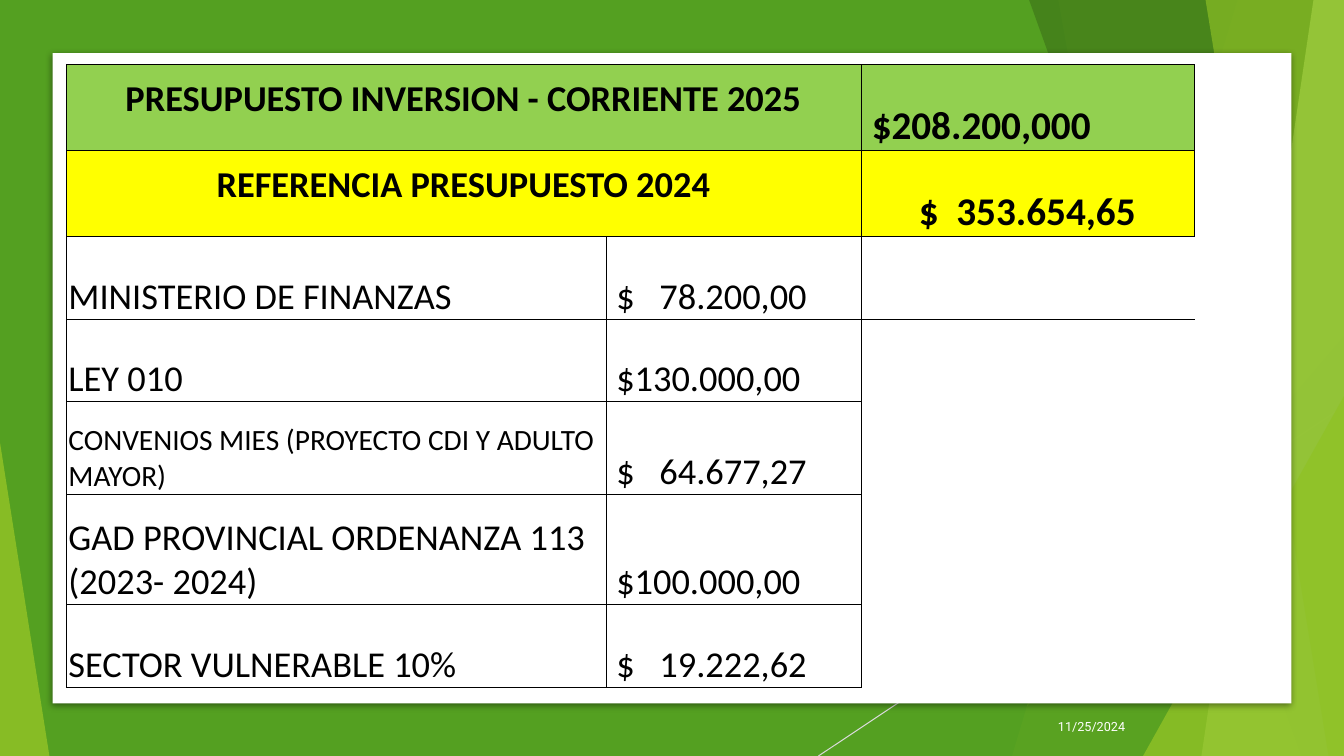
from lxml.etree import SubElement
from pptx import Presentation
from pptx.dml.color import RGBColor
from pptx.enum.shapes import MSO_CONNECTOR, MSO_SHAPE
from pptx.enum.text import MSO_ANCHOR, PP_ALIGN
from pptx.oxml import parse_xml
from pptx.oxml.ns import nsdecls, qn
from pptx.util import Pt

W, H = 960, 540
COLORS = {
    "green": "54A021", "lime": "90C226", "dark": "3F7819", "pale": "C0E474",
    "white": "FFFFFF", "black": "000000", "rule": "D9D9D9",
    "header": "92D050", "reference": "FFFF00",
}

# Back to front. band: top x, bottom x of the left edge; triangle: box, apex
FACETS = [
    ("band", (884.2, 722.9), "lime", 30),
    ("band", (756, 851.8), "lime", 20),
    ("triangle", (703.5, 239.8, 256.5, 300.2, 1), "green", 72),
    ("band", (735.1, 929.5), "dark", 70),
    ("band", (938.2, 858.2), "pale", 70),
    ("band", (861.1, 949), "lime", 65),
    ("triangle", (816.5, 283, 143.5, 257, 1), "lime", 80),
    ("triangle", (0, 316.1, 35.3, 223.9, 0), "lime", 85),
]
PANEL = (37.5, 38, 885, 464.5)
DATE = "11/25/2024"
DATE_BOX = (738.7, 504.7, 72, 28.8)

# title, amount, fill, left margin of the amount
TOTALS = [
    ("PRESUPUESTO INVERSION - CORRIENTE 2025", "$208.200,000", "header", 7.8),
    ("REFERENCIA PRESUPUESTO 2024", "$\t353.654,65", "reference", 41.4),
]
# source, amount, size of the source
SOURCES = [
    ("MINISTERIO DE FINANZAS", "$\t78.200,00", 26),
    ("LEY 010", "$130.000,00", 26),
    ("CONVENIOS MIES (PROYECTO CDI Y ADULTO MAYOR)", "$\t64.677,27", 21),
    ("GAD PROVINCIAL ORDENANZA 113 (2023- 2024)", "$100.000,00", 26),
    ("SECTOR VULNERABLE 10%", "$\t19.222,62", 26),
]
TABLE_LEFT, TABLE_TOP = 47.5, 46.1
COL_WIDTHS = [385.4, 182, 238.5]
ROW_HEIGHTS = [61.4, 61.4, 58.9, 58.9, 66.3, 79, 59]
TITLE_INSETS = (17.3, 8.6, 17.3, 8.6)
NO_STYLE = "{2D5ABB26-0587-4C30-8999-92F81FD0307C}"


def rgb(name):
    return RGBColor.from_string(COLORS[name])


def box(*lengths):
    return [Pt(v) for v in lengths]


def write(tf, text, size, font="Calibri", color="black", bold=False,
          align=PP_ALIGN.LEFT, tab=None):
    """Fill the first paragraph; tab is a left tab stop in points."""
    tf.word_wrap = True
    p = tf.paragraphs[0]
    p.alignment = align
    if tab:
        stops = SubElement(p._p.get_or_add_pPr(), qn("a:tabLst"))
        SubElement(stops, qn("a:tab"), pos=str(Pt(tab)), algn="l")
    r = p.add_run()
    r.text = text
    r.font.size, r.font.name, r.font.bold = Pt(size), font, bold
    r.font.color.rgb = rgb(color)


def paint(sp, color, alpha=100):
    sp.shadow.inherit = False
    sp.line.fill.background()
    sp.fill.solid()
    sp.fill.fore_color.rgb = rgb(color)
    if alpha < 100:
        clr = sp._element.spPr.find(qn("a:solidFill"))[0]
        SubElement(clr, qn("a:alpha"), val=str(alpha * 1000))


def add_rect(shapes, place, color):
    sp = shapes.add_shape(MSO_SHAPE.RECTANGLE, *box(*place))
    paint(sp, color)
    return sp


def add_facet(shapes, kind, geometry, color, alpha):
    if kind == "band":
        top, bottom = geometry
        outline = shapes.build_freeform(Pt(top), 0)
        outline.add_line_segments(
            [box(W, 0), box(W, H), box(bottom, H)], close=True)
        sp = outline.convert_to_shape()
    else:
        *place, apex = geometry
        sp = shapes.add_shape(MSO_SHAPE.ISOSCELES_TRIANGLE, *box(*place))
        sp.adjustments[0] = apex
    paint(sp, color, alpha)


def add_panel_shadow(sp):
    effects = sp._element.spPr.find(qn("a:effectLst"))
    shadow = SubElement(effects, qn("a:outerShdw"), blurRad=str(Pt(5)),
                        dist=str(Pt(1.4)), dir="5400000", rotWithShape="0")
    clr = SubElement(shadow, qn("a:srgbClr"), val=COLORS["black"])
    SubElement(clr, qn("a:alpha"), val="43000")


def style_cell(cell, fill=None, insets=(1.4, 1.4, 1.4, 0),
               anchor=MSO_ANCHOR.BOTTOM, sides="LRTB"):
    (cell.margin_left, cell.margin_top,
     cell.margin_right, cell.margin_bottom) = box(*insets)
    cell.vertical_anchor = anchor
    tcPr = cell._tc.get_or_add_tcPr()
    for side in sides:
        tcPr.append(parse_xml(
            f'<a:ln{side} {nsdecls("a")} w="{Pt(0.5)}"><a:solidFill>'
            f'<a:srgbClr val="{COLORS["black"]}"/></a:solidFill></a:ln{side}>'))
    if fill:
        cell.fill.solid()
        cell.fill.fore_color.rgb = rgb(fill)
    else:
        cell.fill.background()


def add_amount(cell, text, size, left, fill=None, bold=False):
    style_cell(cell, fill, insets=(left, 1.4, 1.4, 0))
    gap = (26.9 if bold else 30.8) if "\t" in text else None
    write(cell.text_frame, text, size, bold=bold, tab=gap)


def add_budget_table(shapes):
    frame = shapes.add_table(
        len(ROW_HEIGHTS), len(COL_WIDTHS),
        *box(TABLE_LEFT, TABLE_TOP, sum(COL_WIDTHS), sum(ROW_HEIGHTS)))
    table = frame.table
    table.first_row = table.horz_banding = False
    table._tbl.tblPr.find(qn("a:tableStyleId")).text = NO_STYLE
    for col, width in zip(table.columns, COL_WIDTHS):
        col.width = Pt(width)
    for row, height in zip(table.rows, ROW_HEIGHTS):
        row.height = Pt(height)

    for i, (title, amount, fill, left) in enumerate(TOTALS):
        cell, covered = table.cell(i, 0), table.cell(i, 1)
        cell.merge(covered)
        for c in (cell, covered):
            style_cell(c, fill, TITLE_INSETS, MSO_ANCHOR.TOP)
        write(cell.text_frame, title, 26, bold=True, align=PP_ALIGN.CENTER)
        add_amount(table.cell(i, 2), amount, 28, left, fill, bold=True)

    for i, (source, amount, size) in enumerate(SOURCES, len(TOTALS)):
        style_cell(table.cell(i, 0))
        write(table.cell(i, 0).text_frame, source, size)
        add_amount(table.cell(i, 1), amount, 26, 7.3)
        style_cell(table.cell(i, 2),
                   sides="LT" if i == len(TOTALS) else "L")


def main():
    prs = Presentation()
    prs.slide_width, prs.slide_height = Pt(W), Pt(H)
    shapes = prs.slides.add_slide(prs.slide_layouts[6]).shapes

    add_rect(shapes, (0, 0, W, H), "green")
    diagonal = shapes.add_connector(
        MSO_CONNECTOR.STRAIGHT, *box(W, 290.2, 584.6, H))
    diagonal.line.color.rgb = rgb("rule")
    diagonal.line.width = Pt(0.75)
    SubElement(diagonal._element.spPr, qn("a:effectLst"))
    for facet in FACETS:
        add_facet(shapes, *facet)
    add_panel_shadow(add_rect(shapes, PANEL, "white"))

    tf = shapes.add_textbox(*box(*DATE_BOX)).text_frame
    tf.vertical_anchor = MSO_ANCHOR.MIDDLE
    write(tf, DATE, 9, font="Roboto", color="white", align=PP_ALIGN.RIGHT)
    add_budget_table(shapes)
    prs.save("out.pptx")


if __name__ == "__main__":
    main()
